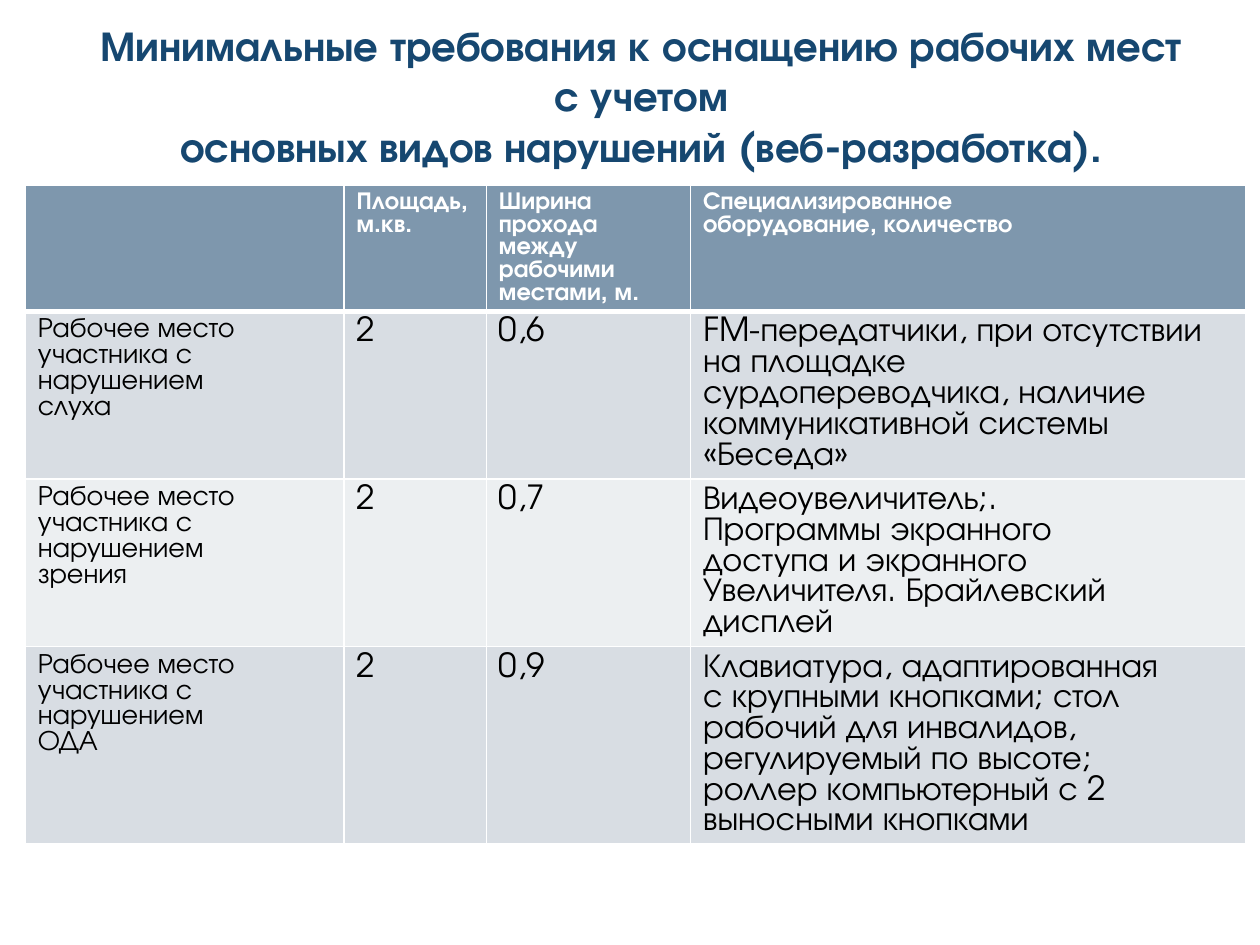
from dataclasses import dataclass

from lxml.etree import SubElement
from pptx import Presentation
from pptx.dml.color import RGBColor
from pptx.enum.text import MSO_ANCHOR, PP_ALIGN
from pptx.oxml.ns import qn
from pptx.util import Inches, Pt

# Content
HEADING = ("Минимальные требования к оснащению рабочих мест с учетом\v"
           "основных видов нарушений (веб-разработка).")
COLUMN_HEADS = [
    [],
    ["Площадь,", "м.кв."],
    ["Ширина прохода между", "рабочими местами, м."],
    ["Специализированное", "оборудование, количество"],
]
WORKPLACE = ["Рабочее место", "участника с", "нарушением"]
# Impairment, area, passage width, equipment
WORKPLACES = [
    ("слуха", "2", "0,6",
     ["FM-передатчики, при отсутствии", "на площадке",
      "сурдопереводчика, наличие", "коммуникативной системы", "«Беседа»"]),
    ("зрения", "2", "0,7",
     ["Видеоувеличитель;.", "Программы экранного", "доступа и экранного",
      "Увеличителя. Брайлевский", "дисплей"]),
    ("ОДА", "2", "0,9",
     ["Клавиатура, адаптированная", "с крупными кнопками; стол",
      "рабочий для инвалидов,", "регулируемый по высоте;",
      "роллер компьютерный с 2", "выносными кнопками"]),
]

# Layout in inches
SLIDE_W, SLIDE_H = 10, 7.5
HEADING_BOX = (0.59, 0.13, 9, 1.25)
TABLE_LEFT, TABLE_TOP = 0.2, 1.47
COLUMN_WIDTHS = [2.53, 1.13, 1.62, 4.41]
ROW_HEIGHTS = [0.99, 1.33, 1.33, 1.57]


@dataclass(frozen=True)
class Theme:
    font: str = "TeX Gyre Adventor"
    heading: str = "164770"
    head_fill: str = "7E97AD"
    bands: tuple = ("D8DDE3", "ECEFF1")
    light: str = "FFFFFF"
    dark: str = "000000"
    heading_size: int = 24
    head_size: int = 14
    label_size: int = 16
    value_size: int = 19
    table_leading: float = 0.925
    rule: int = 1
    head_rule: int = 3


THEME = Theme()


def write(frame, lines, size, color, bold=False, leading=None, align=None):
    for index, line in enumerate(lines):
        paragraph = frame.paragraphs[0] if index == 0 else frame.add_paragraph()
        paragraph.alignment = align
        if leading:
            paragraph.line_spacing = Pt(size * leading)
        for part_index, part in enumerate(line.split("\v")):
            if part_index:
                paragraph.add_line_break()
            run = paragraph.add_run()
            run.text = part
            run.font.name = THEME.font
            run.font.size = Pt(size)
            run.font.bold = bold
            run.font.color.rgb = RGBColor.from_string(color)


def set_borders(cell, top, bottom):
    properties = cell._tc.get_or_add_tcPr()
    widths = {"a:lnL": THEME.rule, "a:lnR": THEME.rule,
              "a:lnT": top, "a:lnB": bottom}
    for position, (side, width) in enumerate(widths.items()):
        line = SubElement(properties, qn(side), w=str(Pt(width)))
        fill = SubElement(line, qn("a:solidFill"))
        SubElement(fill, qn("a:srgbClr"), val=THEME.light)
        properties.insert(position, line)  # borders come before the fill


def add_heading(slide):
    box = slide.shapes.add_textbox(*map(Inches, HEADING_BOX))
    frame = box.text_frame
    frame.word_wrap = True
    frame.vertical_anchor = MSO_ANCHOR.MIDDLE
    write(frame, [HEADING], THEME.heading_size, THEME.heading,
          bold=True, align=PP_ALIGN.CENTER)


def add_requirements(slide):
    rows = [COLUMN_HEADS] + [
        [WORKPLACE + [impairment], [area], [passage], equipment]
        for impairment, area, passage, equipment in WORKPLACES
    ]
    table = slide.shapes.add_table(
        len(rows), len(COLUMN_WIDTHS), Inches(TABLE_LEFT), Inches(TABLE_TOP),
        Inches(sum(COLUMN_WIDTHS)), Inches(sum(ROW_HEIGHTS))).table
    for column, width in zip(table.columns, COLUMN_WIDTHS):
        column.width = Inches(width)
    for row, height in zip(table.rows, ROW_HEIGHTS):
        row.height = Inches(height)

    for r, row in enumerate(rows):
        is_head = r == 0
        fill = THEME.head_fill if is_head else THEME.bands[(r - 1) % 2]
        for c, lines in enumerate(row):
            cell = table.cell(r, c)
            cell.fill.solid()
            cell.fill.fore_color.rgb = RGBColor.from_string(fill)
            set_borders(cell,
                        top=THEME.head_rule if r == 1 else THEME.rule,
                        bottom=THEME.head_rule if is_head else THEME.rule)
            body_size = THEME.label_size if c == 0 else THEME.value_size
            write(cell.text_frame, lines,
                  THEME.head_size if is_head else body_size,
                  THEME.light if is_head else THEME.dark,
                  bold=is_head, leading=THEME.table_leading)


def main():
    deck = Presentation()
    deck.slide_width, deck.slide_height = Inches(SLIDE_W), Inches(SLIDE_H)
    slide = deck.slides.add_slide(deck.slide_layouts[6])
    add_heading(slide)
    add_requirements(slide)
    deck.save("out.pptx")


if __name__ == "__main__":
    main()
